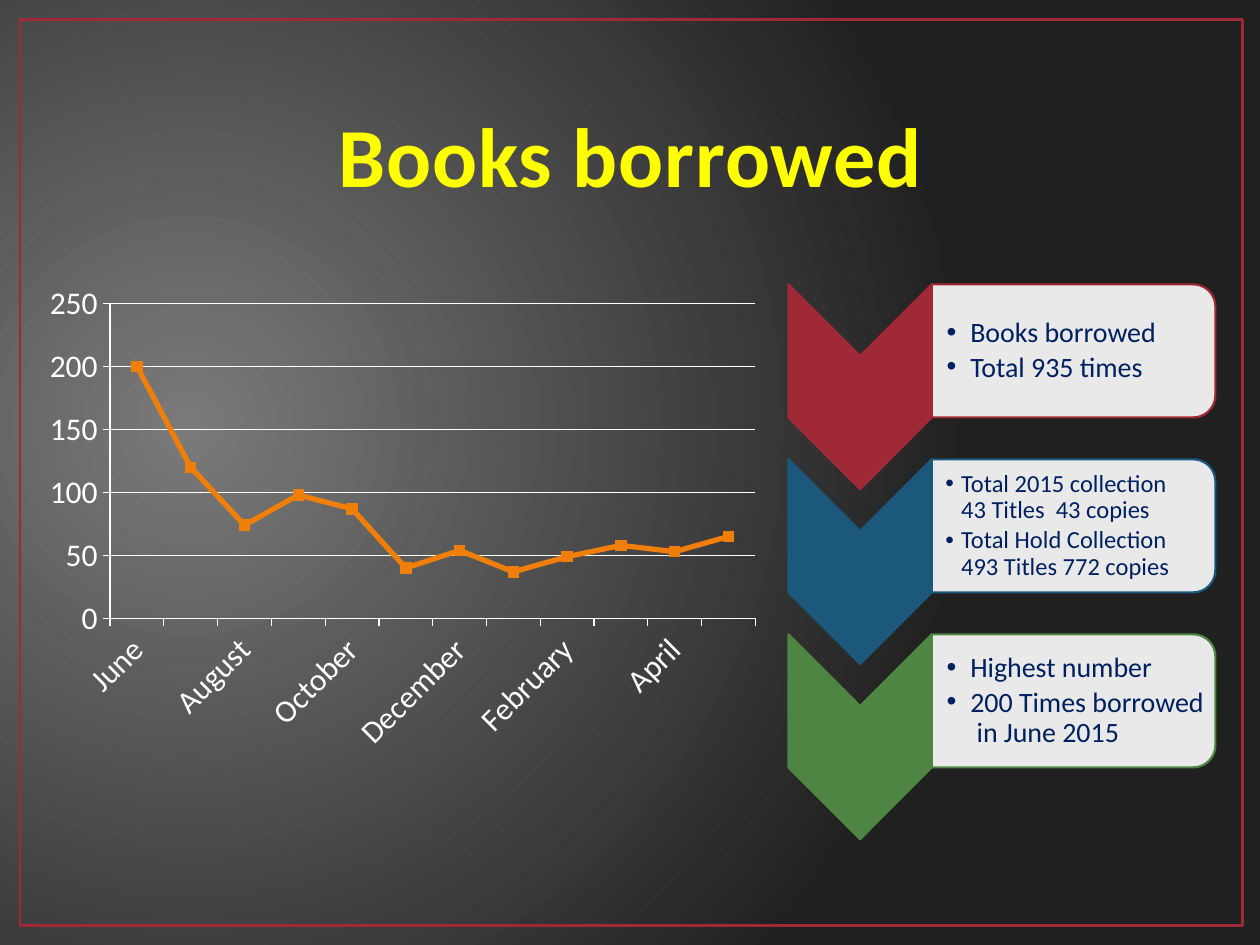
import dataclasses

import lxml.etree
import pptx
import pptx.chart.data
import pptx.dml.color
import pptx.enum.chart
import pptx.enum.shapes
import pptx.enum.text
import pptx.oxml
import pptx.oxml.ns
import pptx.util

Pt = pptx.util.Pt
qn = pptx.oxml.ns.qn
SHAPES = pptx.enum.shapes.MSO_SHAPE


@dataclasses.dataclass(frozen=True)
class Theme:
    font: str = "Calibri"
    glow: str = "7A7A7A"
    dark: str = "202020"
    red: str = "9F2936"
    blue: str = "1B587C"
    green: str = "4E8542"
    orange: str = "F07F09"
    white: str = "FFFFFF"
    navy: str = "002060"
    yellow: str = "FFFF00"
    title_outline: str = "784004"
    title_size: int = 48
    chart_size: int = 18
    large_size: int = 16
    small_size: int = 14


def color(value):
    return pptx.dml.color.RGBColor.from_string(value)


def add_element(parent, tag, **attributes):
    return lxml.etree.SubElement(parent, qn(tag), attributes)


class SlideBuilder:
    def __init__(self, slide, theme):
        self.slide = slide
        self.theme = theme

    def format_font(self, font, size, value):
        font.name = self.theme.font
        font.size = Pt(size)
        font.color.rgb = color(value)

    def background(self):
        fill = self.slide.background.fill
        fill.gradient()
        for stop, value in zip(fill.gradient_stops, (self.theme.glow, self.theme.dark)):
            stop.color.rgb = color(value)
        gradient = next(self.slide.element.iter(qn("a:gradFill")))
        gradient.remove(gradient.find(qn("a:lin")))
        radial = add_element(gradient, "a:path", path="circle")
        add_element(radial, "a:fillToRect", l="15000", t="50000", r="85000", b="60000")

    def shape(self, kind, left, top, width, height, line, line_width, fill=None):
        shape = self.slide.shapes.add_shape(kind, Pt(left), Pt(top), Pt(width), Pt(height))
        shape.shadow.inherit = False
        shape.line.color.rgb = color(line)
        shape.line.width = Pt(line_width)
        if fill:
            shape.fill.solid()
            shape.fill.fore_color.rgb = color(fill)
        else:
            shape.fill.background()
        return shape

    def turned_shape(self, kind, left, top, width, height, line, fill):
        """Place a shape turned by 90 degrees so that it covers the given area."""
        shift = (width - height) / 2
        shape = self.shape(kind, left + shift, top - shift, height, width, line, 1.25, fill)
        shape.rotation = 90
        return shape

    def title(self, text, left, top, width, height):
        title = self.slide.shapes.title
        title.left, title.top, title.width, title.height = map(Pt, (left, top, width, height))
        title.text_frame.text = text
        title.text_frame.vertical_anchor = pptx.enum.text.MSO_ANCHOR.BOTTOM
        paragraph = title.text_frame.paragraphs[0]
        paragraph.alignment = pptx.enum.text.PP_ALIGN.CENTER
        font = paragraph.runs[0].font
        self.format_font(font, self.theme.title_size, self.theme.yellow)
        font.bold = True
        font.line_width = None
        properties = paragraph.runs[0]._r.get_or_add_rPr()
        properties.set("spc", "50")
        outline = add_element(properties, "a:ln", w=str(Pt(1.05)))
        fill = add_element(outline, "a:solidFill")
        add_element(fill, "a:srgbClr", val=self.theme.title_outline)
        properties.insert(0, outline)

    def bullets(self, lines, left, top, width, height, size, indent, inset):
        box = self.slide.shapes.add_textbox(Pt(left), Pt(top), Pt(width), Pt(height))
        frame = box.text_frame
        frame.word_wrap = True
        frame.vertical_anchor = pptx.enum.text.MSO_ANCHOR.MIDDLE
        frame.margin_left = Pt(inset)
        frame.margin_top = frame.margin_right = frame.margin_bottom = Pt(0.75)
        for index, line in enumerate(lines):
            paragraph = frame.add_paragraph() if index else frame.paragraphs[0]
            paragraph.text = line
            paragraph.line_spacing = 0.9
            paragraph.space_after = Pt(0.15 * size)
            properties = paragraph._p.get_or_add_pPr()
            properties.set("marL", str(Pt(indent)))
            properties.set("indent", str(Pt(-indent)))
            add_element(properties, "a:buFont", typeface="Arial")
            add_element(properties, "a:buChar", char="•")
            for run in paragraph.runs:
                self.format_font(run.font, size, self.theme.navy)

    def chevron_item(self, top, accent, lines, size, indent, inset):
        self.turned_shape(SHAPES.CHEVRON, 450.5, top, 82, 117, accent, accent)
        card = self.turned_shape(SHAPES.ROUND_2_SAME_RECTANGLE, 532.5, top, 162, 76,
                                 accent, self.theme.white)
        fill_color = next(card._element.spPr.iter(qn("a:srgbClr")))
        add_element(fill_color, "a:alpha", val="90000")
        self.bullets(lines, 532.5, top + 4, 158.5, 68, size, indent, inset)

    def line_chart(self, categories, name, values, left, top, width, height):
        data = pptx.chart.data.CategoryChartData()
        data.categories = categories
        data.add_series(name, values)
        chart = self.slide.shapes.add_chart(
            pptx.enum.chart.XL_CHART_TYPE.LINE_MARKERS,
            Pt(left), Pt(top), Pt(width), Pt(height), data).chart
        chart.has_legend = False
        chart.has_title = False
        self.format_font(chart.font, self.theme.chart_size, self.theme.white)
        white = color(self.theme.white)
        for axis in (chart.category_axis, chart.value_axis):
            axis.major_tick_mark = pptx.enum.chart.XL_TICK_MARK.OUTSIDE
            axis.format.line.color.rgb = white
            axis.format.line.width = Pt(0.75)
        chart.category_axis.has_major_gridlines = False
        gridlines = chart.value_axis.major_gridlines.format.line
        gridlines.color.rgb = white
        gridlines.width = Pt(0.75)
        chart.plots[0].vary_by_categories = False
        series = chart.plots[0].series[0]
        series.smooth = False
        orange = color(self.theme.orange)
        series.format.line.color.rgb = orange
        series.format.line.width = Pt(3)
        series.marker.style = pptx.enum.chart.XL_MARKER_STYLE.SQUARE
        series.marker.size = 6
        series.marker.format.fill.solid()
        series.marker.format.fill.fore_color.rgb = orange
        series.marker.format.line.color.rgb = orange


def main():
    presentation = pptx.Presentation()
    presentation.slide_width, presentation.slide_height = Pt(720), Pt(540)
    theme = Theme()
    slide = presentation.slides.add_slide(presentation.slide_layouts.get_by_name("Title Only"))
    builder = SlideBuilder(slide, theme)
    builder.background()
    builder.shape(SHAPES.RECTANGLE, 11.5, 11, 698.5, 518, theme.red, 1.5)

    large = (theme.large_size, 13.5, 8.5)
    small = (theme.small_size, 9, 7.75)
    items = [
        (theme.red, ["Books borrowed", "Total 935 times"], large),
        (theme.blue, ["Total 2015 collection\v43 Titles  43 copies",
                      "Total Hold Collection\v493 Titles 772 copies"], small),
        (theme.green, ["Highest number", "200 Times borrowed  in June 2015"], large),
    ]
    for index, (accent, lines, text_style) in enumerate(items):
        builder.chevron_item(162.5 + 100 * index, accent, lines, *text_style)

    builder.title("Books borrowed", 14.5, 60.5, 692, 60)
    months = ["June", "July", "August", "September", "October", "November",
              "December", "January", "February", "March", "April", "May"]
    borrowed = [200, 120, 74, 98, 87, 40, 54, 37, 49, 58, 53, 65]
    builder.line_chart(months, "Series 1", borrowed, 20, 157, 420, 278)
    presentation.save("out.pptx")


if __name__ == "__main__":
    main()
